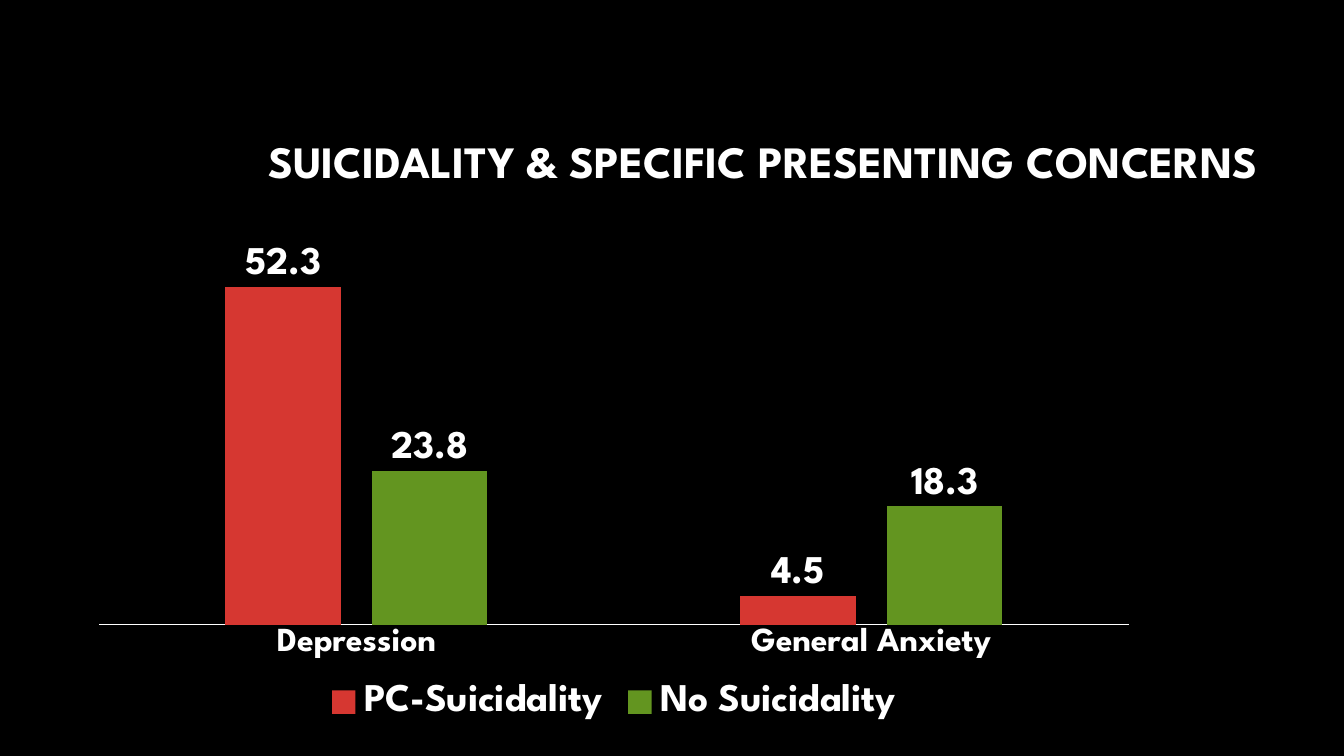
"""Build the slide on suicidality and specific presenting concerns."""
import pptx
import pptx.chart.data
import pptx.dml.color
import pptx.enum.chart
import pptx.enum.text
import pptx.util

Pt = pptx.util.Pt
BLACK = pptx.dml.color.RGBColor(0x00, 0x00, 0x00)
WHITE = pptx.dml.color.RGBColor(0xFF, 0xFF, 0xFF)
RED = pptx.dml.color.RGBColor(0xD6, 0x37, 0x31)
GREEN = pptx.dml.color.RGBColor(0x63, 0x95, 0x20)
FONT_NAME = "League Spartan"
CONCERNS = ["Depression", "General Anxiety"]
GROUPS = [
    ("PC-Suicidality", [52.3, 4.5], RED),
    ("No Suicidality", [23.8, 18.3], GREEN),
]


def style_font(font, size, bold=True):
    """Apply the white slide typeface to a font."""
    font.name = FONT_NAME
    font.size = Pt(size)
    font.bold = bold
    font.color.rgb = WHITE


def add_heading(slide, text):
    """Add the right-aligned heading."""
    heading = slide.shapes.add_textbox(Pt(55.5), Pt(72), Pt(851), Pt(90)).text_frame
    heading.word_wrap = True
    heading.vertical_anchor = pptx.enum.text.MSO_ANCHOR.MIDDLE
    line = heading.paragraphs[0]
    line.text = text
    line.alignment = pptx.enum.text.PP_ALIGN.RIGHT
    line.line_spacing = 0.9
    style_font(line.font, 32)


def style_axes(chart):
    """Show the concern axis as a plain line and hide the value axis."""
    concern_axis = chart.category_axis
    concern_axis.major_tick_mark = pptx.enum.chart.XL_TICK_MARK.NONE
    concern_axis.format.line.color.rgb = WHITE
    concern_axis.format.line.width = Pt(0.75)
    style_font(concern_axis.tick_labels.font, 24)
    percent_axis = chart.value_axis
    percent_axis.minimum_scale = 0
    percent_axis.maximum_scale = 60
    percent_axis.has_major_gridlines = False
    percent_axis.visible = False


def style_group(series, color):
    """Colour the columns of one group and label their values."""
    series.format.fill.solid()
    series.format.fill.fore_color.rgb = color
    values = series.data_labels
    values.show_value = True
    values.position = pptx.enum.chart.XL_LABEL_POSITION.OUTSIDE_END
    style_font(values.font, 28)


def add_concern_chart(slide):
    """Add the column chart comparing both groups by concern."""
    data = pptx.chart.data.CategoryChartData(number_format="General")
    data.categories = CONCERNS
    for name, values, _ in GROUPS:
        data.add_series(name, values)
    chart = slide.shapes.add_chart(
        pptx.enum.chart.XL_CHART_TYPE.COLUMN_CLUSTERED,
        Pt(55.5), Pt(162), Pt(766), Pt(358), data,
    ).chart
    chart.has_title = False
    style_font(chart.font, 10, bold=False)
    style_axes(chart)
    columns = chart.plots[0]
    columns.vary_by_categories = False
    columns.gap_width = 219
    columns.overlap = -27
    for series, (_, _, color) in zip(columns.series, GROUPS):
        style_group(series, color)
    chart.has_legend = True
    chart.legend.position = pptx.enum.chart.XL_LEGEND_POSITION.BOTTOM
    chart.legend.include_in_layout = False
    style_font(chart.legend.font, 28)


def main():
    """Create and save the presentation."""
    deck = pptx.Presentation()
    deck.slide_width = Pt(960)
    deck.slide_height = Pt(540)
    slide = deck.slides.add_slide(deck.slide_layouts[6])
    slide.background.fill.solid()
    slide.background.fill.fore_color.rgb = BLACK
    add_heading(slide, "SUICIDALITY & SPECIFIC PRESENTING CONCERNS")
    add_concern_chart(slide)
    deck.save("out.pptx")


if __name__ == "__main__":
    main()
